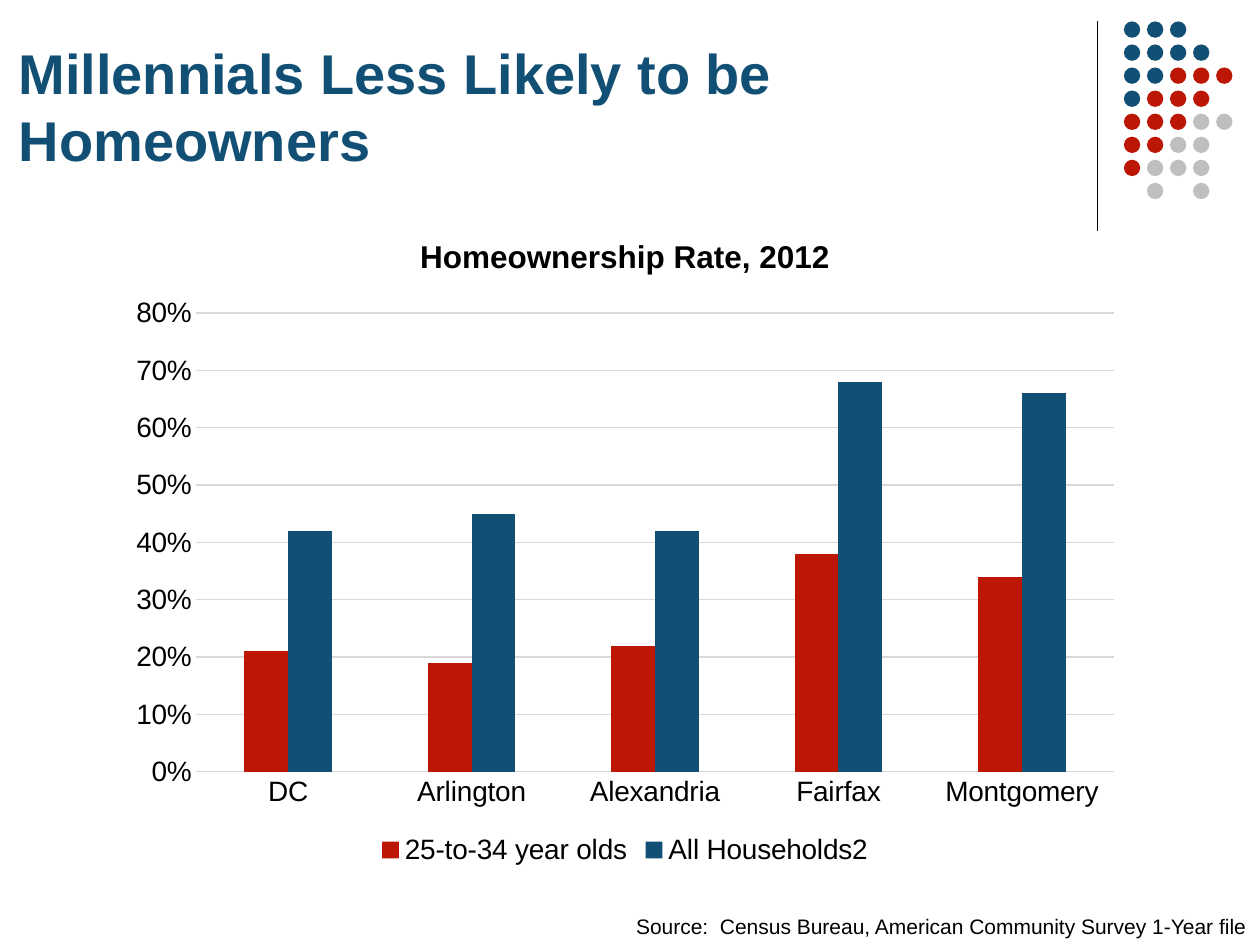
from pptx import Presentation
from pptx.chart.data import CategoryChartData
from pptx.dml.color import RGBColor
from pptx.enum.chart import XL_CHART_TYPE as ChartType, XL_LEGEND_POSITION as LegendPosition
from pptx.enum.chart import XL_TICK_MARK as TickMark
from pptx.enum.shapes import MSO_CONNECTOR as Connector, MSO_SHAPE as Shape
from pptx.enum.text import MSO_ANCHOR as Anchor, MSO_AUTO_SIZE as AutoSize
from pptx.oxml.ns import qn
from pptx.util import Inches, Pt
from lxml import etree

COLORS = {name: RGBColor.from_string(value) for name, value in {
    "blue": "124F74", "red": "BC1604", "gray": "BFBFBF",
    "grid": "D9D9D9", "black": "000000",
}.items()}
FONT = "Arial"


def set_font(font, size, color="black", bold=False):
    font.name = FONT
    font.size = Pt(size)
    font.bold = bold
    font.color.rgb = COLORS[color]


def add_text(text, left, top, width, height, size, color="black", bold=False,
             anchor=Anchor.TOP, wrap=True, auto_size=AutoSize.NONE):
    box = slide.shapes.add_textbox(Inches(left), Inches(top), Inches(width), Inches(height))
    frame = box.text_frame
    frame.word_wrap = wrap
    frame.auto_size = auto_size
    frame.vertical_anchor = anchor
    run = frame.paragraphs[0].add_run()
    run.text = text
    set_font(run.font, size, color, bold)


presentation = Presentation()
presentation.slide_width = Inches(10)
presentation.slide_height = Inches(7.5)
slide = presentation.slides.add_slide(presentation.slide_layouts[6])

# Corner decoration: a vertical rule and a grid of dots
rule = slide.shapes.add_connector(
    Connector.STRAIGHT, Inches(8.71), Inches(0.17), Inches(8.71), Inches(1.83))
rule.line.color.rgb = COLORS["black"]
rule.line.width = Pt(0.75)
etree.SubElement(rule._element.spPr, qn("a:effectLst"))

DOT_COLORS = {"B": "blue", "R": "red", "G": "gray"}
DOT_ROWS = ["BBB", "BBBB", "BBRRR", "BRRR", "RRRGG", "RRGG", "RGGG", ".G.G"]
DOT_SIZE = Inches(0.13)
DOT_PITCH = 0.183
dots = slide.shapes.add_group_shape()
for row, codes in enumerate(DOT_ROWS):
    for column, code in enumerate(codes):
        if code == ".":
            continue
        dot = dots.shapes.add_shape(
            Shape.OVAL, Inches(8.92 + column * DOT_PITCH), Inches(0.17 + row * DOT_PITCH),
            DOT_SIZE, DOT_SIZE)
        dot.shadow.inherit = False
        dot.fill.solid()
        dot.fill.fore_color.rgb = COLORS[DOT_COLORS[code]]
        dot.line.fill.background()

# Homeownership chart
chart_data = CategoryChartData(number_format="0%")
chart_data.categories = ["DC", "Arlington", "Alexandria", "Fairfax", "Montgomery"]
chart_data.add_series("25-to-34 year olds", [0.21, 0.19, 0.22, 0.38, 0.34])
chart_data.add_series("All Households2", [0.42, 0.45, 0.42, 0.68, 0.66])
chart = slide.shapes.add_chart(
    ChartType.COLUMN_CLUSTERED, Inches(0.92), Inches(1.67), Inches(8.08), Inches(5.24),
    chart_data).chart
set_font(chart.font, 10)

chart.has_title = True
title_frame = chart.chart_title.text_frame
title_frame.text = "Homeownership Rate, 2012"
set_font(title_frame.paragraphs[0].runs[0].font, 18, bold=True)
chart.chart_title.include_in_layout = False

chart.has_legend = True
chart.legend.position = LegendPosition.BOTTOM
chart.legend.include_in_layout = False
set_font(chart.legend.font, 16)

plot = chart.plots[0]
plot.gap_width = 219
plot.overlap = 0
plot.vary_by_categories = False
for series, color in zip(plot.series, ["red", "blue"]):
    series.format.fill.solid()
    series.format.fill.fore_color.rgb = COLORS[color]

category_axis, value_axis = chart.category_axis, chart.value_axis
for axis in (category_axis, value_axis):
    axis.major_tick_mark = TickMark.NONE
    axis.minor_tick_mark = TickMark.NONE
    set_font(axis.tick_labels.font, 16)
value_axis.minimum_scale = 0
value_axis.maximum_scale = 0.8
value_axis.major_unit = 0.1
value_axis.tick_labels.number_format = "0%"
value_axis.tick_labels.number_format_is_linked = False
value_axis.format.line.fill.background()
for line in (category_axis.format.line, value_axis.major_gridlines.format.line):
    line.color.rgb = COLORS["grid"]
    line.width = Pt(0.75)

add_text("Millennials Less Likely to be Homeowners", 0.05, 0.25, 8.7, 1.17,
         size=32, color="blue", bold=True, anchor=Anchor.BOTTOM)
add_text("Source:  Census Bureau, American Community Survey 1-Year file",
         4.95, 7.2, 5.09, 0.3, size=12, wrap=False, auto_size=AutoSize.SHAPE_TO_FIT_TEXT)

presentation.save("out.pptx")
